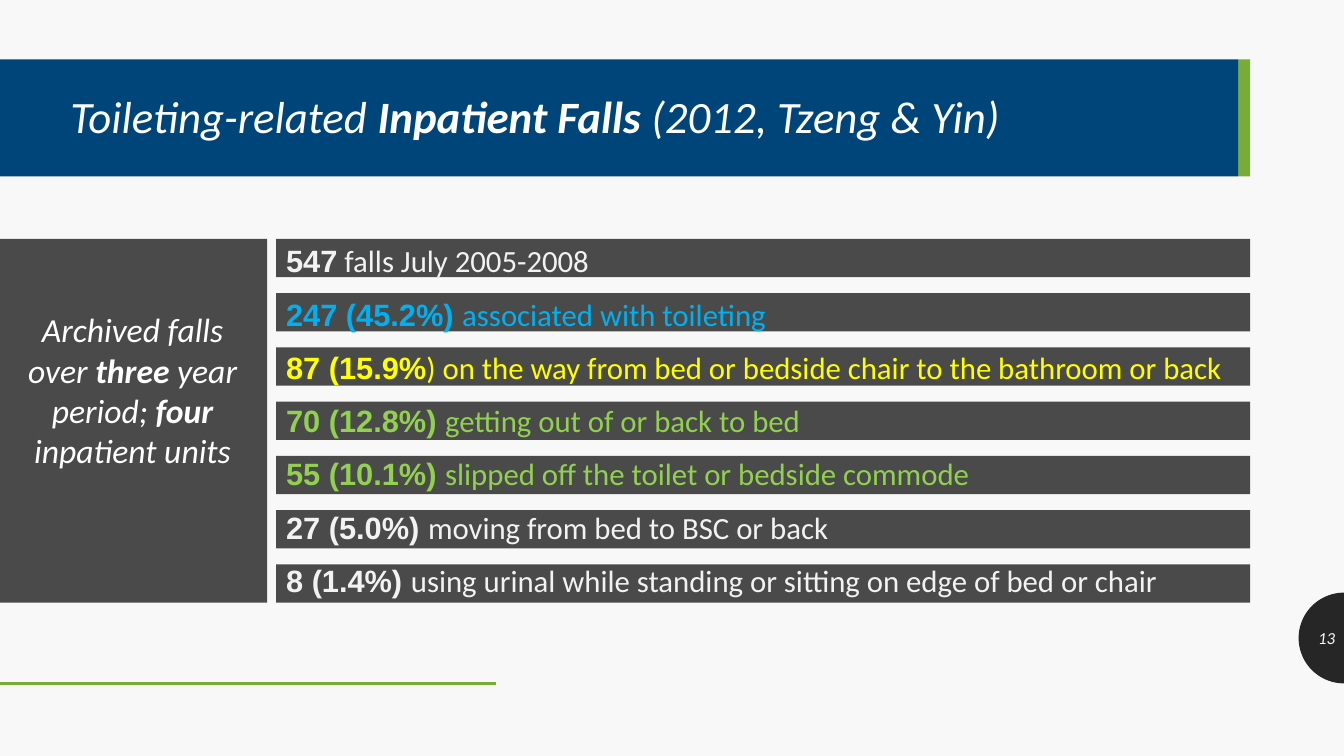
from math import cos, pi, sin

from lxml.etree import SubElement
from pptx import Presentation
from pptx.dml.color import RGBColor
from pptx.enum.shapes import MSO_CONNECTOR, MSO_SHAPE
from pptx.enum.text import MSO_ANCHOR, PP_ALIGN
from pptx.oxml.ns import qn
from pptx.util import Inches, Pt

WHITE, PALE, SOFT = "FFFFFF", "F8F8F8", "F2F2F2"
NAVY, GREEN, CHARCOAL, BLACK = "004579", "78AC36", "4A4A4A", "262626"
CYAN, YELLOW, LIME = "00B0F0", "FFFF00", "92D050"

FINDINGS = [
    ("547", " falls July 2005-2008", SOFT),
    ("247 (45.2%) ", "associated with toileting", CYAN),
    ("87 (15.9%", ") on the way from bed or bedside chair to the bathroom or back", YELLOW),
    ("70 (12.8%) ", "getting out of or back to bed", LIME),
    ("55 (10.1%) ", "slipped off the toilet or bedside commode", LIME),
    ("27 (5.0%) ", "moving from bed to BSC or back", SOFT),
    ("8 (1.4%) ", "using urinal while standing or sitting on edge of bed or chair", SOFT),
]


def rgb(value):
    return RGBColor.from_string(value)


def add_run(paragraph, text, *, size, color=WHITE, font="Calibri", bold=False, italic=False):
    run = paragraph.add_run()
    run.text = text
    run.font.name = font
    run.font.size = Pt(size)
    run.font.bold = bold
    run.font.italic = italic
    run.font.color.rgb = rgb(color)


class SlideBuilder:
    def __init__(self, slide):
        self.slide = slide
        slide.background.fill.solid()
        slide.background.fill.fore_color.rgb = rgb(PALE)

    def paint(self, shape, color):
        shape.shadow.inherit = False
        shape.fill.solid()
        shape.fill.fore_color.rgb = rgb(color)
        shape.line.fill.background()

    def bar(self, left, top, width, height, color):
        box = [Inches(value) for value in (left, top, width, height)]
        self.paint(self.slide.shapes.add_shape(MSO_SHAPE.RECTANGLE, *box), color)

    def half_disc(self, right, middle, radius, color, steps=48):
        angles = [pi / 2 + pi * step / steps for step in range(steps + 1)]
        points = [(Inches(right + radius * cos(a)), Inches(middle + radius * sin(a)))
                  for a in angles]
        outline = self.slide.shapes.build_freeform(*points[0])
        outline.add_line_segments(points[1:], close=True)
        self.paint(outline.convert_to_shape(), color)

    def rule(self, left, right, y, color, width):
        line = self.slide.shapes.add_connector(
            MSO_CONNECTOR.STRAIGHT, Inches(left), Inches(y), Inches(right), Inches(y))
        line.line.color.rgb = rgb(color)
        line.line.width = Pt(width)
        SubElement(line._element.spPr, qn("a:effectLst"))

    def text(self, left, top, width, height, paragraphs, *, anchor=MSO_ANCHOR.TOP,
             align=PP_ALIGN.LEFT, line_spacing=1.0, space_before=0, **style):
        box = [Inches(value) for value in (left, top, width, height)]
        frame = self.slide.shapes.add_textbox(*box).text_frame
        frame.word_wrap = True
        frame.vertical_anchor = anchor
        for index, runs in enumerate(paragraphs):
            paragraph = frame.add_paragraph() if index else frame.paragraphs[0]
            paragraph.alignment = align
            paragraph.line_spacing = line_spacing
            paragraph.space_before = Pt(space_before if index else 0)
            for words, changes in runs:
                add_run(paragraph, words, **{**style, **changes})


def main():
    deck = Presentation()
    deck.slide_width, deck.slide_height = Inches(13.33), Inches(7.5)
    page = SlideBuilder(deck.slides.add_slide(deck.slide_layouts[6]))
    strong = {"bold": True}

    page.half_disc(13.33, 6.33, 0.45, BLACK)
    page.bar(12.28, 0.59, 0.12, 1.16, GREEN)
    page.bar(0, 0.59, 12.28, 1.16, NAVY)
    page.rule(0, 4.92, 6.78, GREEN, 2)

    panel_top, panel_height, row_height = 2.37, 3.61, 0.38
    row_pitch = (panel_height - row_height) / (len(FINDINGS) - 1)
    page.bar(0, panel_top, 2.65, panel_height, CHARCOAL)
    for row in range(len(FINDINGS)):
        page.bar(2.74, panel_top + row * row_pitch, 9.66, row_height, CHARCOAL)

    page.text(0.6, 0.61, 10.93, 1.14,
              [[("Toileting-related ", {}), ("Inpatient Falls ", strong),
                ("(2012, Tzeng & Yin)", {})]],
              anchor=MSO_ANCHOR.MIDDLE, line_spacing=0.9, size=32, italic=True)
    page.text(12.89, 6.13, 0.45, 0.4, [[("13", {})]], anchor=MSO_ANCHOR.MIDDLE,
              align=PP_ALIGN.RIGHT, size=12, color=PALE, italic=True)
    page.text(0.1, 3.02, 2.43, 1.72,
              [[("Archived falls over ", {}), ("three", strong), (" year period; ", {}),
                ("four", strong), (" inpatient units", {})]],
              align=PP_ALIGN.CENTER, size=24, italic=True)
    page.text(2.74, 2.31, 9.66, 3.8,
              [[(count, {"font": "Arial", "bold": True, "color": color}),
                (event, {"color": color})] for count, event, color in FINDINGS],
              line_spacing=1.12, space_before=8.5, size=22)

    deck.save("out.pptx")


if __name__ == "__main__":
    main()
